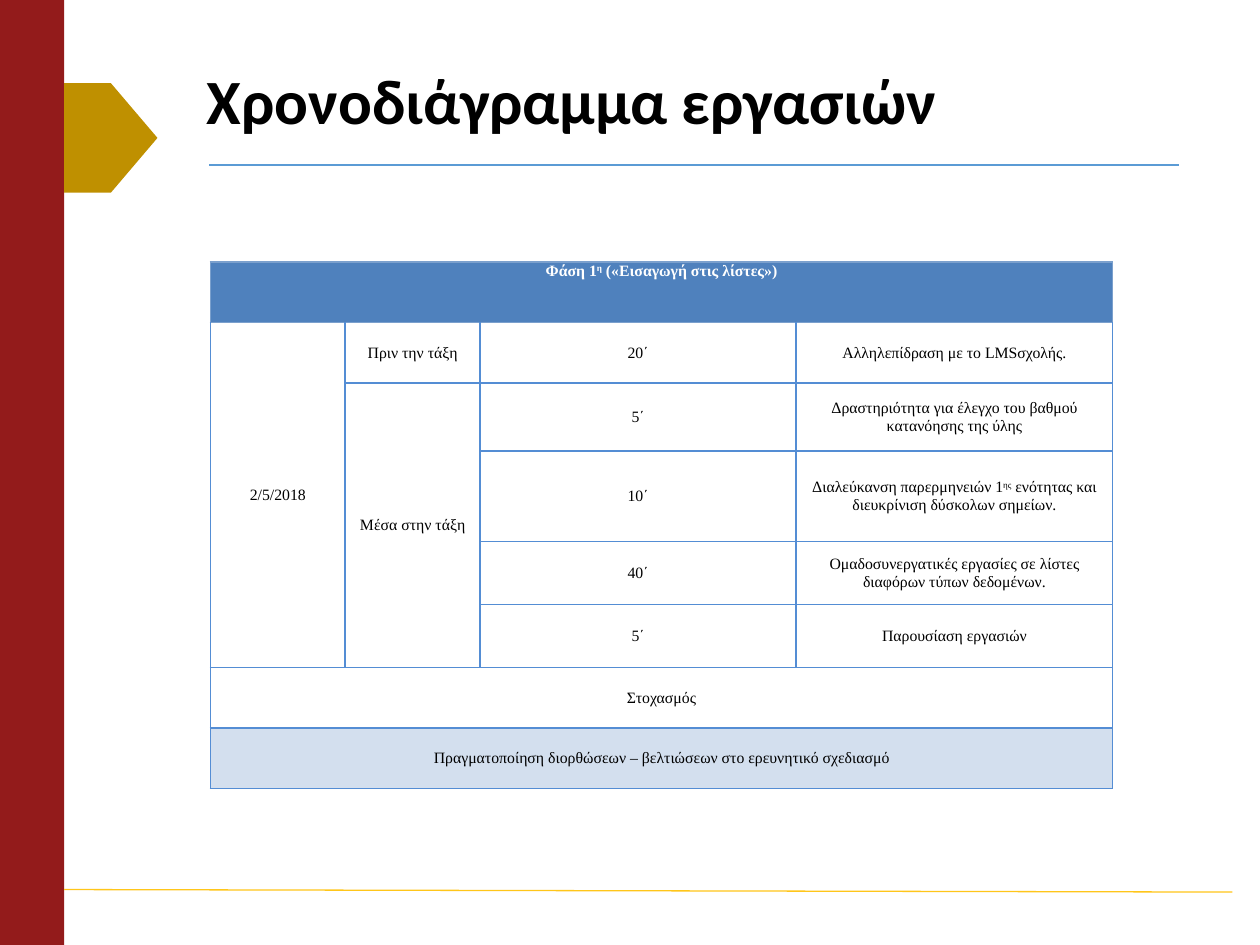
"""Build the work timetable slide with its merged phase table."""
from lxml import etree
from pptx import Presentation
from pptx.dml.color import RGBColor
from pptx.enum.shapes import MSO_CONNECTOR, MSO_SHAPE
from pptx.enum.text import MSO_ANCHOR, PP_ALIGN
from pptx.oxml.ns import qn
from pptx.util import Inches, Pt

RECTANGLE, PENTAGON = MSO_SHAPE.RECTANGLE, MSO_SHAPE.PENTAGON
STRAIGHT = MSO_CONNECTOR.STRAIGHT
TOP, MIDDLE = MSO_ANCHOR.TOP, MSO_ANCHOR.MIDDLE
LEFT, CENTER = PP_ALIGN.LEFT, PP_ALIGN.CENTER


def color(value):
    return RGBColor.from_string(value)


def add_run(paragraph, text, font_name, size, text_color, bold):
    run = paragraph.add_run()
    run.text = text
    run.font.name = font_name
    run.font.size = Pt(size)
    run.font.bold = bold
    run.font.color.rgb = color(text_color)
    return run


presentation = Presentation()
presentation.slide_width = Inches(10)
presentation.slide_height = Inches(7.5)
slide = presentation.slides.add_slide(presentation.slide_layouts[5])

band_width = Inches(0.51)
decorations = [
    (RECTANGLE, 0, 0, band_width, presentation.slide_height, "931B1B"),
    (PENTAGON, band_width, Inches(0.66), Inches(0.74), Inches(0.87), "BF9000"),
]
for kind, left, top, width, height, fill in decorations:
    shape = slide.shapes.add_shape(kind, left, top, width, height)
    shape.shadow.inherit = False
    shape.fill.solid()
    shape.fill.fore_color.rgb = color(fill)
    shape.line.fill.background()

rules = [(1.66, 1.31, 9.36, 1.31, "5B9BD5"), (0.51, 7.06, 9.78, 7.08, "FFC61A")]
for *ends, line_color in rules:
    connector = slide.shapes.add_connector(STRAIGHT, *map(Inches, ends))
    connector.line.color.rgb = color(line_color)
    connector.line.width = Pt(0.75)
    etree.SubElement(connector._element.spPr, qn("a:effectLst"))

title = slide.shapes.title
title.left, title.top = Inches(1.54), Inches(0.41)
title.width, title.height = Inches(7.87), Inches(0.84)
title.text_frame.word_wrap = True
title.text_frame.vertical_anchor = MIDDLE
heading = title.text_frame.paragraphs[0]
heading.alignment = LEFT
heading.line_spacing = 0.9
add_run(heading, "Χρονοδιάγραμμα εργασιών", "Calibri", 36, "000000", True)

column_widths = [1.07, 1.07, 2.51, 2.51]
row_heights = [0.48, 0.48, 0.54, 0.72, 0.5, 0.5, 0.48, 0.48]
last_row, last_column = len(row_heights) - 1, len(column_widths) - 1
frame = slide.shapes.add_table(
    len(row_heights), len(column_widths), Inches(1.67), Inches(2.08),
    Inches(sum(column_widths)), Inches(sum(row_heights)))
table = frame.table
for column, width in zip(table.columns, column_widths):
    column.width = Inches(width)
for row, height in zip(table.rows, row_heights):
    row.height = Inches(height)

for row_index, row in enumerate(table.rows):
    is_header = row_index == 0
    fill = {0: "4F81BD", last_row: "D3DFEE"}.get(row_index, "FFFFFF")
    for cell in row.cells:
        cell.margin_left = cell.margin_right = Inches(0.06)
        cell.margin_top = cell.margin_bottom = 0
        cell.vertical_anchor = TOP if is_header else MIDDLE
        properties = cell._tc.get_or_add_tcPr()
        for side in "LRTB":
            is_light = is_header or (row_index == 1 and side == "T")
            border = etree.SubElement(properties, qn(f"a:ln{side}"), w=str(Pt(1)))
            border_fill = etree.SubElement(border, qn("a:solidFill"))
            etree.SubElement(border_fill, qn("a:srgbClr"),
                             val="7BA0CD" if is_light else "548DD4")
        cell.fill.solid()
        cell.fill.fore_color.rgb = color(fill)

merges = [(0, 0, 0, last_column), (1, 0, 5, 0), (2, 1, 5, 1),
          (6, 0, 6, last_column), (last_row, 0, last_row, last_column)]
for first_row, first_column, end_row, end_column in merges:
    table.cell(first_row, first_column).merge(table.cell(end_row, end_column))

cell_texts = {
    (0, 0): ["Φάση 1", "η", " («Εισαγωγή στις λίστες»)"],
    (1, 0): ["2/5/2018"],
    (1, 1): ["Πριν την τάξη"],
    (1, 2): ["20΄"],
    (1, 3): ["Αλληλεπίδραση με το LMSσχολής."],
    (2, 1): ["Μέσα στην τάξη"],
    (2, 2): ["5΄"],
    (2, 3): ["Δραστηριότητα για έλεγχο του βαθμού κατανόησης της ύλης"],
    (3, 2): ["10΄"],
    (3, 3): ["Διαλεύκανση παρερμηνειών 1", "ης",
             " ενότητας και διευκρίνιση δύσκολων σημείων."],
    (4, 2): ["40΄"],
    (4, 3): ["Ομαδοσυνεργατικές εργασίες σε λίστες διαφόρων τύπων δεδομένων."],
    (5, 2): ["5΄"],
    (5, 3): ["Παρουσίαση εργασιών"],
    (6, 0): ["Στοχασμός"],
    (7, 0): ["Πραγματοποίηση διορθώσεων – βελτιώσεων στο ερευνητικό σχεδιασμό"],
}
for (row_index, column_index), texts in cell_texts.items():
    is_header = row_index == 0
    paragraph = table.cell(row_index, column_index).text_frame.paragraphs[0]
    paragraph.alignment = CENTER
    for text in texts:
        run = add_run(paragraph, text, "Times New Roman", 9,
                      "FFFFFF" if is_header else "000000", is_header)
        if text in ("η", "ης"):
            run._r.get_or_add_rPr().set("baseline", "30000")

presentation.save("out.pptx")
